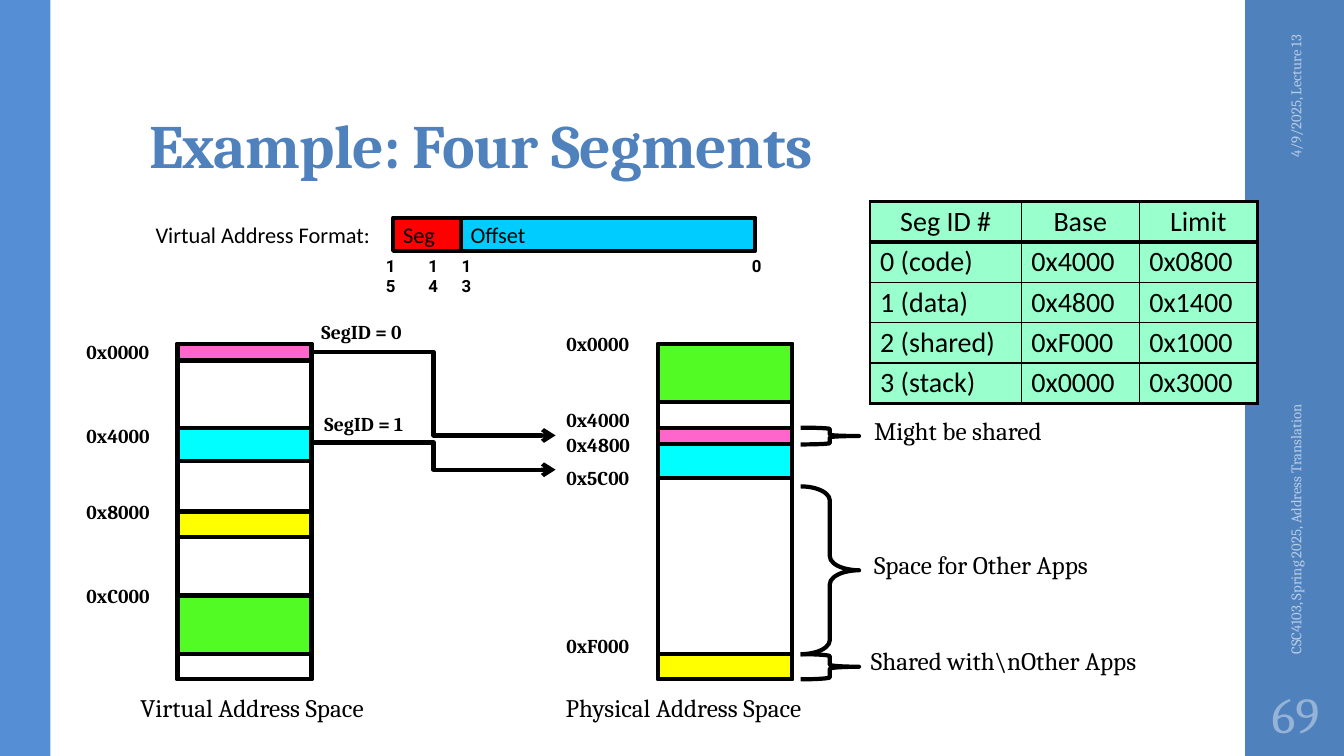
"""Build the slide on address translation with four segments."""
from pptx import Presentation
from pptx import util as u
from pptx.dml.color import RGBColor
from pptx.enum import shapes as sh, text as tx
from pptx.oxml.ns import qn
from lxml import etree

THEME = {
    "ink": "000000", "blue": "4F81BD", "sky": "558ED5", "pale": "B9CDE5",
    "page": "95B3D7", "mint": "99FFCC", "red": "FF0000", "aqua": "00CCFF",
    "pink": "FF66CC", "cyan": "00FFFF", "lime": "53FB25", "gold": "FFFF00",
    "serif": "Cambria", "sans": "Calibri", "mono": "Roboto",
    "title": 44, "number": 36, "cell": 20, "note": 18, "field": 16,
    "label": 14, "bit": 12, "side": 10.5, "line": 3,
}
BARS = [("blue", 12.35, 1), ("sky", 0, 0.5)]
SIDES = [
    ("4/9/2025, Lecture 13", (11.81, 1.09, 2.08, 0.4), "RIGHT"),
    ("CSC4103, Spring 2025, Address Translation", (10.89, 4.43, 3.92, 0.4), "LEFT"),
]
ROWS = [
    ("Seg ID #", "Base", "Limit"),
    ("0 (code)", "0x4000", "0x0800"),
    ("1 (data)", "0x4800", "0x1400"),
    ("2 (shared)", "0xF000", "0x1000"),
    ("3 (stack)", "0x0000", "0x3000"),
]
COLS = (1.5, 1.17, 1.17)
FIELDS = [("Offset", "aqua", 4.57, 2.92), ("Seg", "red", 3.9, 0.67)]
BITS = [("15", 3.73), ("14", 4.15), ("13", 4.48), ("0", 7.36)]

TOP, UNIT, WIDE = 3.41, 3.33 / 40, 1.33
SPACES = [
    (1.76, [(None, 0, 40), ("pink", 0, 2), ("cyan", 10, 4),
            ("lime", 30, 7), (None, 30, 10), ("gold", 20, 3)],
     0.76, [("0x0000", -1), ("0x4000", 9), ("0x8000", 18), ("0xC000", 28)]),
    (6.53, [(None, 0, 40), ("pink", 10, 2), ("cyan", 12, 4),
            ("lime", 0, 7), ("gold", 37, 3)],
     5.52, [("0x0000", -2), ("0x4000", 7), ("0x4800", 10),
            ("0x5C00", 14), ("0xF000", 34)]),
]
NAMES = [("Virtual Address Space", 0.71, 3.58), ("Physical Address Space", 5.31, 2.94)]
BRACES = [(17, 20, 0.24), (10, 2, 0.08), (37, 3, 0.08)]
NOTES = [
    ("Might be shared", (8.57, 4.07, 3.38, 0.4)),
    ("Space for Other Apps", (8.57, 5.4, 3.82, 0.4)),
    ("Shared with\\nOther Apps", (8.54, 6.35, 4, 0.7)),
]
LINKS = [
    ("SegID = 0", (3.09, 3.12), 3.49, 4.32),
    ("SegID = 1", (3.12, 4.04), 4.39, 4.66),
]


def color(name):
    return RGBColor.from_string(THEME[name])


def style(frame, size, font="serif", ink="ink", bold=False, align="LEFT"):
    for para in frame.paragraphs:
        para.alignment = tx.PP_ALIGN[align]
        for run in para.runs:
            run.font.size = u.Pt(THEME[size])
            run.font.name = THEME[font]
            run.font.bold = bold
            run.font.color.rgb = color(ink)


def write(slide, words, box, size, wrap=True, anchor="TOP", grow=True, **look):
    part = slide.shapes.add_textbox(*map(u.Inches, box))
    frame = part.text_frame
    frame.text = words
    frame.word_wrap = wrap
    frame.vertical_anchor = tx.MSO_ANCHOR[anchor]
    if grow:
        frame.auto_size = tx.MSO_AUTO_SIZE.SHAPE_TO_FIT_TEXT
    style(frame, size, **look)
    return part


def block(slide, box, fill=None, line=True, kind="RECTANGLE"):
    part = slide.shapes.add_shape(sh.MSO_SHAPE[kind], *map(u.Inches, box))
    part.shadow.inherit = False
    if fill:
        part.fill.solid()
        part.fill.fore_color.rgb = color(fill)
    else:
        part.fill.background()
    if line:
        part.line.color.rgb = color("ink")
        part.line.width = u.Pt(THEME["line"])
    else:
        part.line.fill.background()
    return part


def frame_page(slide):
    for fill, left, wide in BARS:
        block(slide, (left, 0, wide, 7.5), fill, line=False)
    title = write(slide, "Example: Four Segments", (1.38, 0.32, 10.6, 1.53), "title",
                  anchor="BOTTOM", grow=False, ink="blue", bold=True)
    para = title.text_frame.paragraphs[0]
    para.line_spacing = 0.9
    para.runs[0].font._element.set("spc", "-50")
    for words, box, align in SIDES:
        side = write(slide, words, box, "side", anchor="MIDDLE", grow=False,
                     ink="pale", align=align)
        side.rotation = 270
    write(slide, "69", (12.35, 6.75, 1, 0.65), "number", anchor="MIDDLE",
          grow=False, ink="page", align="CENTER")


def border(cell, edges):
    props = cell._tc.get_or_add_tcPr()
    for edge, width in edges:
        line = etree.SubElement(props, qn("a:ln" + edge), w=str(u.Pt(width)))
        fill = etree.SubElement(line, qn("a:solidFill"))
        etree.SubElement(fill, qn("a:srgbClr"), val=THEME["ink"])


def add_grid(slide):
    high = 0.4
    box = (8.63, 2, sum(COLS), high * len(ROWS))
    grid = slide.shapes.add_table(len(ROWS), len(COLS), *map(u.Inches, box)).table
    grid.first_row = grid.horz_banding = False
    for col, wide in zip(grid.columns, COLS):
        col.width = u.Inches(wide)
    for r, row in enumerate(ROWS):
        grid.rows[r].height = u.Inches(high)
        for c, words in enumerate(row):
            cell = grid.cell(r, c)
            cell.text_frame.text = words
            style(cell.text_frame, "cell", "sans", align="LEFT" if r else "CENTER")
            cell.text_frame.paragraphs[0].line_spacing = 0.9
            border(cell, [
                ("L", 1 if c else 2.25),
                ("R", 2.25 if c == len(COLS) - 1 else 1),
                ("T", {0: 2.25, 1: 3}.get(r, 1)),
                ("B", {0: 3, len(ROWS) - 1: 2.25}.get(r, 1)),
            ])
            cell.fill.solid()
            cell.fill.fore_color.rgb = color("mint")


def add_format(slide):
    write(slide, "Virtual Address Format:", (1.23, 2.14, 2.54, 0.37), "field",
          wrap=False, font="sans", align="RIGHT")
    for words, fill, left, wide in FIELDS:
        part = block(slide, (left, 2.16, wide, 0.33), fill)
        part.text_frame.text = words
        part.text_frame.word_wrap = False
        part.text_frame.vertical_anchor = tx.MSO_ANCHOR.MIDDLE
        style(part.text_frame, "field", "sans")
    for words, left in BITS:
        write(slide, words, (left, 2.49, 0.36, 0.3), "bit", font="mono", bold=True)


def add_spaces(slide):
    for left, parts, edge, labels in SPACES:
        for fill, start, size in parts:
            block(slide, (left, TOP + start * UNIT, WIDE, size * UNIT), fill)
        for words, start in labels:
            write(slide, words, (edge, TOP + start * UNIT, 0.86, 0.33), "label",
                  wrap=False, bold=True)
    for words, left, wide in NAMES:
        write(slide, words, (left, 6.82, wide, 0.4), "note", align="CENTER")
    for start, size, bend in BRACES:
        brace = block(slide, (7.94, TOP + start * UNIT, 0.58, size * UNIT),
                      kind="RIGHT_BRACE")
        brace.adjustments[0] = bend
    for words, box in NOTES:
        write(slide, words, box, "note")


def add_links(slide):
    for words, spot, start, end in LINKS:
        link = slide.shapes.add_connector(
            sh.MSO_CONNECTOR.ELBOW, *map(u.Inches, (3.09, start, 5.51, end)))
        link.line.color.rgb = color("ink")
        link.line.width = u.Pt(THEME["line"])
        props = link._element.spPr
        etree.SubElement(props.find(qn("a:ln")), qn("a:tailEnd"), type="arrow")
        etree.SubElement(props, qn("a:effectLst"))
        write(slide, words, (*spot, 1.1, 0.34), "label", wrap=False, bold=True)


def main():
    deck = Presentation()
    deck.slide_width, deck.slide_height = u.Inches(13.33), u.Inches(7.5)
    slide = deck.slides.add_slide(deck.slide_layouts[6])
    for draw in (frame_page, add_grid, add_format, add_spaces, add_links):
        draw(slide)
    deck.save("out.pptx")


if __name__ == "__main__":
    main()
